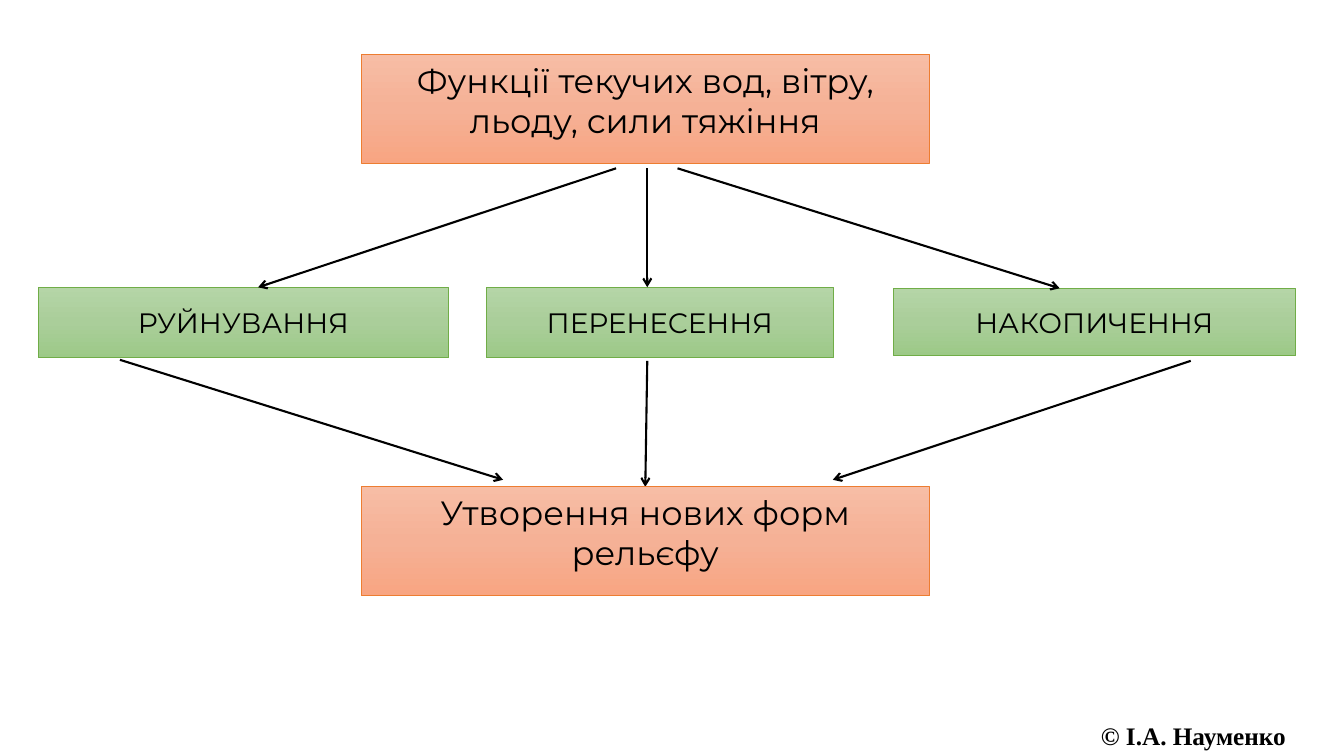
from copy import deepcopy
from dataclasses import dataclass

from pptx import Presentation
from pptx.dml.color import RGBColor
from pptx.enum.shapes import MSO_CONNECTOR as Link, MSO_SHAPE as Form
from pptx.enum.text import MSO_ANCHOR as Anchor, MSO_AUTO_SIZE as Auto, PP_ALIGN as Align
from pptx.oxml.ns import qn
from pptx.util import Inches, Pt
from lxml.etree import SubElement


@dataclass(frozen=True)
class Theme:
    font: str = "Montserrat"
    serif: str = "Times New Roman"
    ink: str = "000000"
    peach: tuple = ("F7BDA5", "F5B196", "F8A582")
    green: tuple = ("B5D5A7", "AACE9A", "9CC987")
    rust: str = "ED7D31"
    leaf: str = "70AD47"
    big: int = 24
    mid: int = 20
    small: int = 18
    edge: float = 0.5
    stroke: float = 1.5


LOOK = Theme()
CAUSE = "Функції текучих вод, вітру, льоду, сили тяжіння"
RESULT = "Утворення нових форм рельєфу"
STEPS = [
    ("РУЙНУВАННЯ", (0.38, 2.85, 4.07, 0.7)),
    ("ПЕРЕНЕСЕННЯ", (4.82, 2.85, 3.45, 0.7)),
    ("НАКОПИЧЕННЯ", (8.86, 2.86, 3.99, 0.67)),
]
CREDIT = "© І.А. Науменко"
ENDS = (3.58, 5.64, 1.08)
TOP, LOW = 0.54, 4.83
ARROWS = [
    ((6.42, 1.67), (6.42, 2.85)),
    ((6.72, 1.67), (10.51, 2.86)),
    ((6.11, 1.67), (2.56, 2.85)),
    ((6.42, 3.58), (6.4, 4.83)),
    ((1.19, 3.57), (4.99, 4.76)),
    ((11.81, 3.58), (8.26, 4.76)),
]


def hue(code):
    return RGBColor.from_string(code)


def write(shape, words, size, font, bold=False):
    run = shape.text_frame.paragraphs[0].add_run()
    run.text = words
    run.font.name = font
    run.font.size = Pt(size)
    run.font.bold = bold
    run.font.color.rgb = hue(LOOK.ink)


def shade(shape, tones):
    shape.fill.gradient()
    shape.fill.gradient_angle = 270
    first = shape._element.spPr.find(qn("a:gradFill")).find(qn("a:gsLst"))[0]
    first.addnext(deepcopy(first))
    for stop, tone, place in zip(shape.fill.gradient_stops, tones, (0, 0.5, 1)):
        stop.color.rgb = hue(tone)
        stop.position = place


def dress(shape, words, size, tones, edge, anchor):
    shade(shape, tones)
    shape.line.color.rgb = hue(edge)
    shape.line.width = Pt(LOOK.edge)
    frame = shape.text_frame
    frame.word_wrap = True
    frame.auto_size = Auto.NONE
    frame.vertical_anchor = anchor
    frame.paragraphs[0].alignment = Align.CENTER
    write(shape, words, size, LOOK.font)


def block(slide, spot):
    shape = slide.shapes.add_shape(Form.RECTANGLE, *map(Inches, spot))
    shape.shadow.inherit = False
    return shape


def arrow(slide, start, end):
    line = slide.shapes.add_connector(Link.STRAIGHT, *map(Inches, start + end))
    line.line.color.rgb = hue(LOOK.ink)
    line.line.width = Pt(LOOK.stroke)
    props = line._element.spPr
    SubElement(props.find(qn("a:ln")), qn("a:tailEnd"), type="arrow")
    SubElement(props, qn("a:effectLst"))


def main():
    deck = Presentation()
    deck.slide_width, deck.slide_height = Inches(13.33), Inches(7.5)
    slide = deck.slides.add_slide(deck.slide_layouts[5])

    left, width, height = ENDS
    title = slide.shapes.title
    title.left, title.top = Inches(left), Inches(TOP)
    title.width, title.height = Inches(width), Inches(height)
    dress(title, CAUSE, LOOK.big, LOOK.peach, LOOK.rust, Anchor.TOP)

    for words, spot in STEPS:
        dress(block(slide, spot), words, LOOK.mid, LOOK.green, LOOK.leaf, Anchor.MIDDLE)
    for start, end in ARROWS:
        arrow(slide, start, end)
    last = block(slide, (left, LOW, width, height))
    dress(last, RESULT, LOOK.big, LOOK.peach, LOOK.rust, Anchor.TOP)

    credit = slide.shapes.add_textbox(*map(Inches, (10.82, 7.1, 2.05, 0.4)))
    credit.text_frame.word_wrap = False
    credit.text_frame.auto_size = Auto.SHAPE_TO_FIT_TEXT
    write(credit, CREDIT, LOOK.small, LOOK.serif, True)

    deck.save("out.pptx")


if __name__ == "__main__":
    main()
